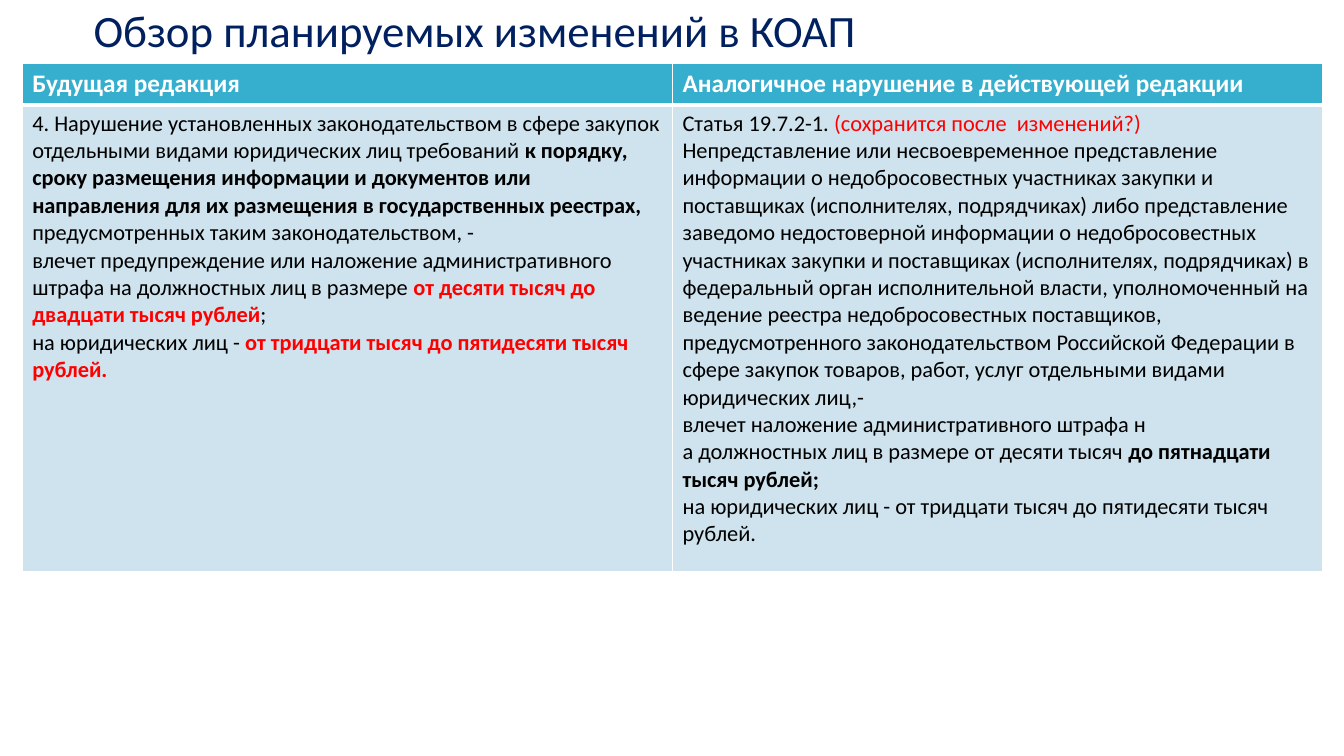
from lxml import etree
from pptx import Presentation
from pptx import util as u
from pptx.dml.color import RGBColor
from pptx.enum import text
from pptx.oxml import ns

NAVY = RGBColor(0x00, 0x20, 0x60)
TEAL = RGBColor(0x36, 0xAF, 0xCE)
PALE = RGBColor(0xCE, 0xE3, 0xED)
WHITE = RGBColor(0xFF, 0xFF, 0xFF)
BLACK = RGBColor(0x00, 0x00, 0x00)
RED = RGBColor(0xFF, 0x00, 0x00)
FONT = "Calibri"

PLAIN, BOLD, RED_PLAIN, RED_BOLD = (
    (BLACK, False), (BLACK, True), (RED, False), (RED, True))
HEAD = (WHITE, True)
BREAK = None

TITLE = "Обзор планируемых изменений в КОАП"
HEADINGS = ["Будущая редакция", "Аналогичное нарушение в действующей редакции"]
FUTURE = [
    [("4. Нарушение установленных законодательством в сфере закупок отдельными "
      "видами юридических лиц требований ", PLAIN),
     ("к порядку, сроку размещения информации и документов или направления "
      "для их размещения в государственных реестрах,", BOLD),
     (" предусмотренных таким законодательством, -", PLAIN)],
    [("влечет предупреждение или наложение административного штрафа "
      "на должностных лиц в размере ", PLAIN),
     ("от десяти тысяч до двадцати тысяч рублей", RED_BOLD),
     (";", PLAIN)],
    [("на юридических лиц - ", PLAIN),
     ("от тридцати тысяч до пятидесяти тысяч рублей.", RED_BOLD)],
]
CURRENT = [
    [("Статья 19.7.2-1. ", PLAIN),
     ("(сохранится после  изменений?)", RED_PLAIN),
     BREAK,
     ("Непредставление или несвоевременное представление информации "
      "о недобросовестных участниках закупки и поставщиках (исполнителях, "
      "подрядчиках) либо представление заведомо недостоверной информации "
      "о недобросовестных участниках закупки и поставщиках (исполнителях, "
      "подрядчиках) в федеральный орган исполнительной власти, уполномоченный "
      "на ведение реестра недобросовестных поставщиков, предусмотренного "
      "законодательством Российской Федерации в сфере закупок товаров, работ, "
      "услуг отдельными видами юридических лиц,-", PLAIN)],
    [("влечет наложение административного штрафа н", PLAIN)],
    [("а должностных лиц в размере от десяти тысяч ", PLAIN),
     ("до пятнадцати тысяч рублей;", BOLD)],
    [("на юридических лиц - от тридцати тысяч до пятидесяти тысяч рублей.", PLAIN)],
]

# Each row: height in inches, font size, fill, bottom border width, cell contents
ROWS = [
    (0.41, 18, TEAL, 3, [[[(heading, HEAD)]] for heading in HEADINGS]),
    (4.63, 16, PALE, 1, [FUTURE, CURRENT]),
]
COLUMN_WIDTH = 6.45


def write(frame, paragraphs, size):
    for index, spans in enumerate(paragraphs):
        para = frame.add_paragraph() if index else frame.paragraphs[0]
        para.font.name, para.font.size = FONT, u.Pt(size)
        for item in spans:
            if item is BREAK:
                para.add_line_break()
                continue
            span = para.add_run()
            span.text, (color, bold) = item
            span.font.name, span.font.size = FONT, u.Pt(size)
            span.font.color.rgb, span.font.bold = color, bold


def set_borders(cell, bottom):
    """Draw white borders; they must precede the fill in the cell properties."""
    properties = cell._tc.get_or_add_tcPr()
    for side, width in (("lnL", 1), ("lnR", 1), ("lnT", 1), ("lnB", bottom)):
        line = etree.SubElement(properties, ns.qn(f"a:{side}"), w=str(u.Pt(width)))
        fill = etree.SubElement(line, ns.qn("a:solidFill"))
        etree.SubElement(fill, ns.qn("a:srgbClr"), val=str(WHITE))


def add_title(page):
    box = page.shapes.add_textbox(u.Inches(0.83), u.Inches(0.02),
                                  u.Inches(11.5), u.Inches(0.61))
    frame = box.text_frame
    frame.word_wrap = True
    frame.vertical_anchor = text.MSO_ANCHOR.MIDDLE
    write(frame, [[(TITLE, (NAVY, False))]], 32)
    frame.paragraphs[0].line_spacing = 0.9


def add_comparison(page):
    columns = len(HEADINGS)
    height = sum(row[0] for row in ROWS)
    table = page.shapes.add_table(
        len(ROWS), columns, u.Inches(0.22), u.Inches(0.63),
        u.Inches(COLUMN_WIDTH * columns), u.Inches(height)).table
    for row, (row_height, size, color, bottom, contents) in enumerate(ROWS):
        table.rows[row].height = u.Inches(row_height)
        for column, paragraphs in enumerate(contents):
            cell = table.cell(row, column)
            set_borders(cell, bottom)
            cell.fill.solid()
            cell.fill.fore_color.rgb = color
            write(cell.text_frame, paragraphs, size)


def main():
    deck = Presentation()
    deck.slide_width, deck.slide_height = u.Inches(13.33), u.Inches(7.5)
    page = deck.slides.add_slide(deck.slide_layouts[6])
    add_title(page)
    add_comparison(page)
    deck.save("out.pptx")


if __name__ == "__main__":
    main()
